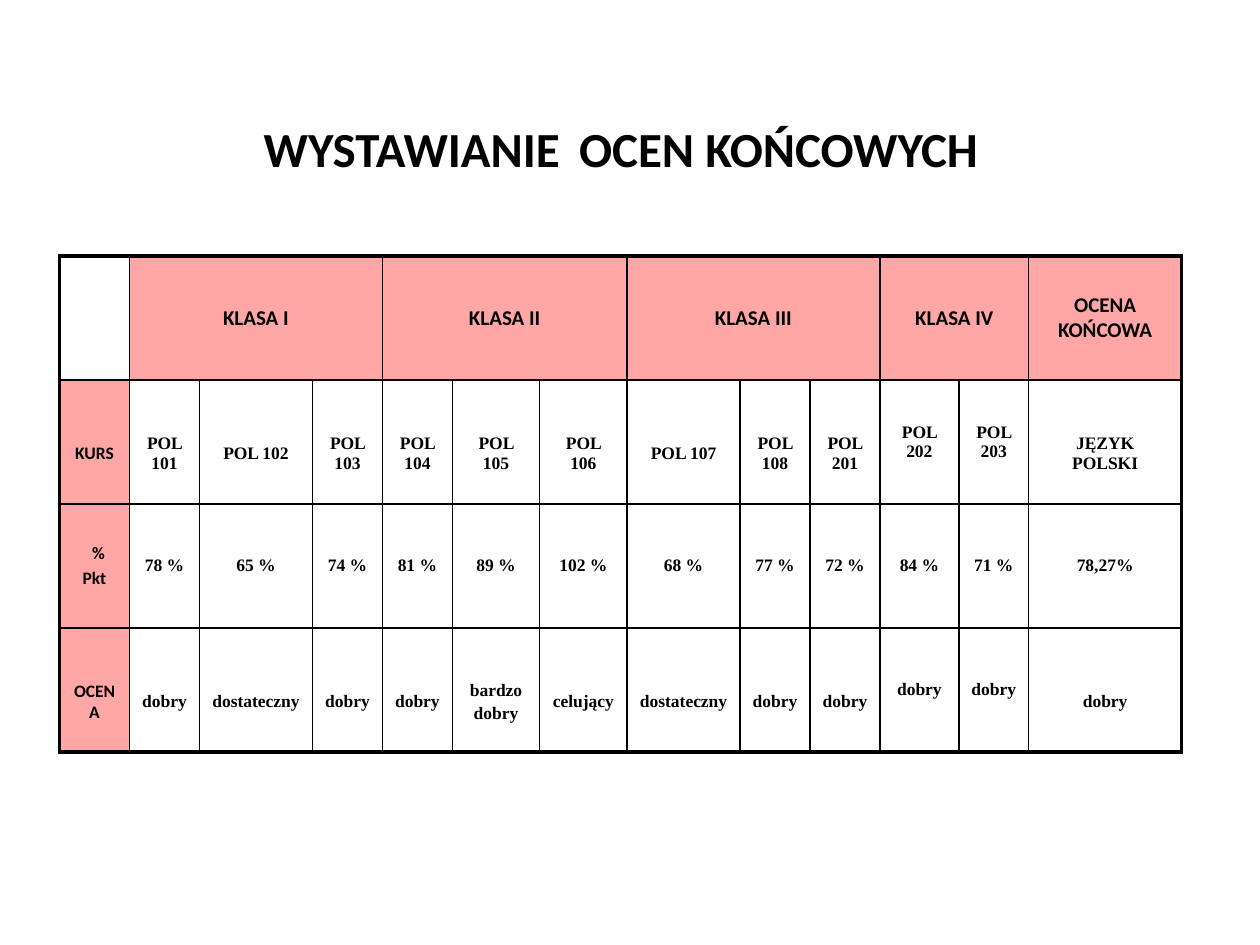
from dataclasses import dataclass

from lxml.etree import SubElement
from pptx import Presentation
from pptx.dml.color import RGBColor
from pptx.enum.text import MSO_ANCHOR, PP_ALIGN
from pptx.oxml import parse_xml
from pptx.oxml.ns import nsdecls, qn
from pptx.util import Cm, Pt


@dataclass(frozen=True)
class Theme:
    ink: RGBColor = RGBColor(0x00, 0x00, 0x00)
    header_fill: RGBColor = RGBColor(0xFF, 0x50, 0x50)
    header_alpha: int = 50000
    label_font: str = "Calibri"
    value_font: str = "Times New Roman"
    gap_font: str = "Arial"
    title_size: Pt = Pt(28)
    title_gap_size: Pt = Pt(40)
    header_size: Pt = Pt(12)
    body_size: Pt = Pt(10)
    inner_line: Pt = Pt(1)
    outer_line: Pt = Pt(2.25)


theme = Theme()
NO_STYLE = "{2D5ABB26-0587-4C30-8999-92F81FD0307C}"
LOWERED_MARGIN = Cm(0.6)
COLUMN_WIDTHS = [1.41, 1.41, 2.28, 1.41, 1.41, 1.76, 1.76,
                 2.28, 1.41, 1.41, 1.59, 1.41, 3.08]
ROW_HEIGHT = 2.5
CLASS_SPANS = [(1, 3), (4, 6), (7, 9), (10, 11)]
RAISED_COLUMNS = (10, 11)
ROWS = [
    ["", "KLASA I", "", "", "KLASA II", "", "", "KLASA III", "", "",
     "KLASA IV", "", "OCENA KOŃCOWA"],
    ["KURS", "POL 101", "POL 102", "POL 103", "POL 104", "POL 105", "POL 106",
     "POL 107", "POL 108", "POL 201", "POL 202", "POL 203", "JĘZYK POLSKI"],
    ["%\nPkt", "78 %", "65 %", "74 %", "81 %", "89 %", "102 %",
     "68 %", "77 %", "72 %", "84 %", "71 %", "78,27%"],
    ["OCENA", "dobry", "dostateczny", "dobry", "dobry", "bardzo\ndobry", "celujący",
     "dostateczny", "dobry", "dobry", "dobry", "dobry", "dobry"],
]
LAST_ROW, LAST_COLUMN = len(ROWS) - 1, len(COLUMN_WIDTHS) - 1


def add_run(paragraph, text, font_name, size):
    run = paragraph.add_run()
    run.text = text
    run.font.name = font_name
    run.font.size = size
    run.font.bold = True
    run.font.color.rgb = theme.ink


def set_borders(cell, widths):
    """Draw solid cell edges; widths maps L, R, T and B, in that order, to a length."""
    properties = cell._tc.get_or_add_tcPr()
    for position, (side, width) in enumerate(widths.items()):
        line = parse_xml(
            f'<a:ln{side} {nsdecls("a")} w="{int(width)}"><a:solidFill>'
            f'<a:srgbClr val="{theme.ink}"/></a:solidFill></a:ln{side}>')
        properties.insert(position, line)


presentation = Presentation()
presentation.slide_width, presentation.slide_height = Cm(25.4), Cm(19.05)
slide = presentation.slides.add_slide(presentation.slide_layouts[6])

# Title
title = slide.shapes.add_textbox(Cm(1.4), Cm(1.4), Cm(22.23), Cm(2.82))
title.text_frame.word_wrap = True
title.text_frame.vertical_anchor = MSO_ANCHOR.MIDDLE
title_paragraph = title.text_frame.paragraphs[0]
title_paragraph.alignment = PP_ALIGN.CENTER
add_run(title_paragraph, "WYSTAWIANIE", theme.label_font, theme.title_size)
add_run(title_paragraph, " ", theme.gap_font, theme.title_gap_size)
add_run(title_paragraph, "OCEN KOŃCOWYCH", theme.label_font, theme.title_size)

# Grade table
grade_frame = slide.shapes.add_table(
    len(ROWS), len(COLUMN_WIDTHS), Cm(1.2), Cm(5.16),
    Cm(sum(COLUMN_WIDTHS)), Cm(ROW_HEIGHT * len(ROWS)))
table = grade_frame.table
table.first_row = table.horz_banding = False
table._tbl.tblPr.find(qn("a:tableStyleId")).text = NO_STYLE
for column, width in zip(table.columns, COLUMN_WIDTHS):
    column.width = Cm(width)
for row in table.rows:
    row.height = Cm(ROW_HEIGHT)
for first, last in CLASS_SPANS:
    table.cell(0, first).merge(table.cell(0, last))

for row_index, texts in enumerate(ROWS):
    for column_index, text in enumerate(texts):
        cell = table.cell(row_index, column_index)
        cell.vertical_anchor = MSO_ANCHOR.MIDDLE
        is_label = row_index == 0 or column_index == 0

        if is_label and (row_index or column_index):
            cell.fill.solid()
            cell.fill.fore_color.rgb = theme.header_fill
            color = cell._tc.tcPr.find(qn("a:solidFill"))[0]
            SubElement(color, qn("a:alpha"), val=str(theme.header_alpha))
        else:
            cell.fill.background()

        on_edge = {"L": column_index == 0, "R": column_index == LAST_COLUMN,
                   "T": row_index == 0, "B": row_index == LAST_ROW}
        set_borders(cell, {
            side: theme.outer_line if outer else theme.inner_line
            for side, outer in on_edge.items()
            if side in "TB" or not cell.is_spanned})

        if not text:
            continue
        if row_index in (1, 3) and column_index not in RAISED_COLUMNS:
            cell.margin_top = LOWERED_MARGIN
        for line_index, line_text in enumerate(text.split("\n")):
            if line_index == 0:
                paragraph = cell.text_frame.paragraphs[0]
            else:
                paragraph = cell.text_frame.add_paragraph()
                paragraph.space_before = Pt(2)
            paragraph.alignment = PP_ALIGN.CENTER
            if line_text == "%":
                paragraph._p.get_or_add_pPr().set("marL", str(int(Cm(0.16))))
            add_run(paragraph, line_text,
                    theme.label_font if is_label else theme.value_font,
                    theme.header_size if row_index == 0 else theme.body_size)

presentation.save("out.pptx")
